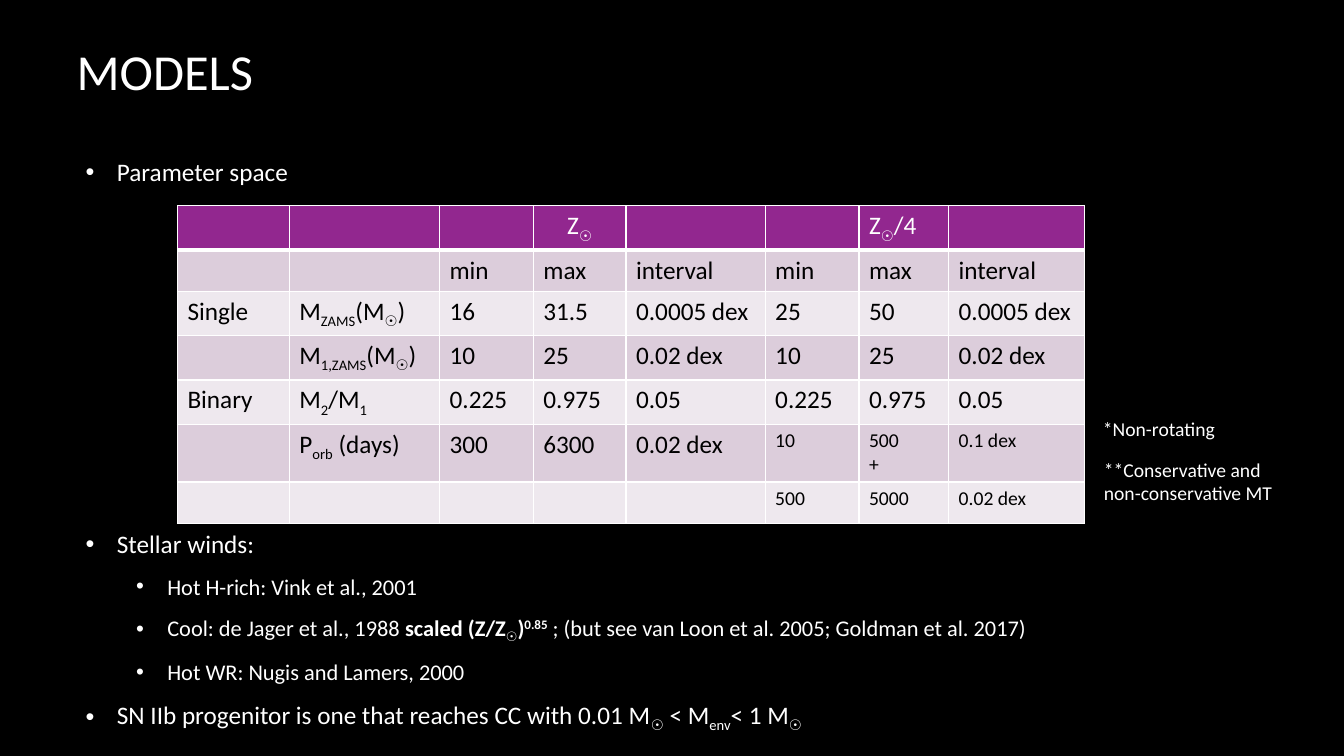
from pptx import Presentation
from pptx.dml.color import RGBColor
from pptx.enum.text import MSO_ANCHOR, PP_ALIGN
from pptx.oxml import parse_xml
from pptx.oxml.ns import nsdecls
from pptx.util import Inches, Pt

# Runs are split by "|"; a run may open with _ (subscript), ^ (superscript), ! (bold).
TITLE = "MODELS"
SPACE = [(0, "Parameter space")]
WINDS = [
    (0, "Stellar winds:"),
    (1, "Hot H-rich: Vink et al., 2001"),
    (1, "Cool: de Jager et al., 1988 |!scaled (Z/Z|!_☉|!)|!^0.85"
        "| ; (but see van Loon et al. 2005; Goldman et al. 2017)"),
    (1, "Hot WR: Nugis and Lamers, 2000"),
    (0, "SN IIb progenitor is one that reaches CC with 0.01 M|!_☉| < M|_env|< 1 M|!_☉"),
]
NOTES = [
    (10.84, 4.09, 0.34, ["*Non-rotating"]),
    (10.85, 4.49, 0.57, ["**Conservative and", "non-conservative MT"]),
]
GRID = [
    ["", "", "", "Z|_☉", "", "", "Z|_☉|/4", ""],
    ["", "", "min", "max", "interval", "min", "max", "interval"],
    ["Single", "M|_ZAMS|(M|!_☉|)", "16", "31.5", "0.0005 dex", "25", "50", "0.0005 dex"],
    ["", "M|_1,ZAMS|(M|!_☉|)", "10", "25", "0.02 dex", "10", "25", "0.02 dex"],
    ["Binary", "M|_2|/M|_1", "0.225", "0.975", "0.05", "0.225", "0.975", "0.05"],
    ["", "P|_orb| (days)", "300", "6300", "0.02 dex", "10", "500\n+", "0.1 dex"],
    ["", "", "", "", "", "500", "5000", "0.02 dex"],
]
WIDTHS = [1.11, 1.49, 0.93, 0.92, 1.38, 0.93, 0.89, 1.35]
HEIGHTS = [0.44, 0.41, 0.44, 0.44, 0.44, 0.57, 0.41]
SMALL_ROW, SMALL_COL = 5, 5  # smaller text starts here

FONT = "Calibri"
BLACK = RGBColor(0x00, 0x00, 0x00)
WHITE = RGBColor(0xFF, 0xFF, 0xFF)
PURPLE = RGBColor(0x92, 0x27, 0x8F)
BANDS = [RGBColor(0xEE, 0xE8, 0xEE), RGBColor(0xDC, 0xCD, 0xDB)]
SHIFT = {"_": "-25000", "^": "30000"}


def add_runs(para, line, size, color):
    for part in line.split("|"):
        text = part.lstrip("!_^")
        marks = part[:len(part) - len(text)]
        run = para.add_run()
        run.text = text
        font = run.font
        font.name, font.size, font.bold = FONT, Pt(size), "!" in marks
        font.color.rgb = color
        for mark, shift in SHIFT.items():
            if mark in marks:
                run._r.get_or_add_rPr().set("baseline", shift)


def add_lines(frame, lines, size, color):
    for i, line in enumerate(lines):
        para = frame.add_paragraph() if i else frame.paragraphs[0]
        add_runs(para, line, size, color)


def place(shape, *box):
    shape.left, shape.top, shape.width, shape.height = map(Inches, box)


def fill_list(shape, items):
    frame = shape.text_frame
    frame.vertical_anchor = MSO_ANCHOR.MIDDLE
    for i, (level, line) in enumerate(items):
        para = frame.add_paragraph() if i else frame.paragraphs[0]
        para.level = level
        props = para._p.get_or_add_pPr()
        props.set("marL", str(Inches(0.31 + 0.5 * level)))
        props.set("indent", str(Inches(-0.31)))
        for tag in (f'<a:buClr {nsdecls("a")}><a:srgbClr val="{WHITE}"/></a:buClr>',
                    f'<a:buFont {nsdecls("a")} typeface="Arial"/>',
                    f'<a:buChar {nsdecls("a")} char="•"/>'):
            props.append(parse_xml(tag))
        para.space_before = Pt(0)
        para.space_after = Pt(10 if len(items) > 1 else 0)
        add_runs(para, line, 16 if level else 18, WHITE)


def add_edges(cell, row):
    props = cell._tc.get_or_add_tcPr()
    for side in "LRTB":
        thick = (row == 0 and side == "B") or (row == 1 and side == "T")
        props.append(parse_xml(
            f'<a:ln{side} {nsdecls("a")} w="{Pt(3 if thick else 1)}"><a:solidFill>'
            f'<a:srgbClr val="{WHITE}"/></a:solidFill></a:ln{side}>'))


def add_grid(slide):
    table = slide.shapes.add_table(
        len(GRID), len(WIDTHS), Inches(1.76), Inches(2.04),
        Inches(sum(WIDTHS)), Inches(sum(HEIGHTS))).table
    for col, width in zip(table.columns, WIDTHS):
        col.width = Inches(width)
    for r, (row, height) in enumerate(zip(GRID, HEIGHTS)):
        table.rows[r].height = Inches(height)
        for c, text in enumerate(row):
            cell = table.cell(r, c)
            add_edges(cell, r)
            cell.fill.solid()
            cell.fill.fore_color.rgb = BANDS[r % 2] if r else PURPLE
            small = r >= SMALL_ROW and c >= SMALL_COL
            if text:
                add_lines(cell.text_frame, text.split("\n"),
                          14 if small else 18, BLACK if r else WHITE)
    table.cell(0, 3).text_frame.paragraphs[0].alignment = PP_ALIGN.CENTER


def main():
    deck = Presentation()
    deck.slide_width, deck.slide_height = Inches(13.33), Inches(7.5)
    slide = deck.slides.add_slide(deck.slide_layouts[3])
    slide.background.fill.solid()
    slide.background.fill.fore_color.rgb = BLACK

    title, space, winds = slide.placeholders
    place(title, 0.66, -0.1, 11.08, 1.59)
    title.text_frame.vertical_anchor = MSO_ANCHOR.MIDDLE
    title.text_frame.paragraphs[0].alignment = PP_ALIGN.LEFT
    add_lines(title.text_frame, [TITLE], 36, WHITE)

    place(space, 0.75, 1.49, 11.08, 0.42)
    fill_list(space, SPACE)
    place(winds, 0.75, 5.17, 11.08, 2.18)
    fill_list(winds, WINDS)

    add_grid(slide)
    for left, top, height, lines in NOTES:
        note = slide.shapes.add_textbox(
            Inches(left), Inches(top), Inches(1.96), Inches(height))
        note.text_frame.word_wrap = True
        add_lines(note.text_frame, lines, 14, WHITE)
    deck.save("out.pptx")


if __name__ == "__main__":
    main()
